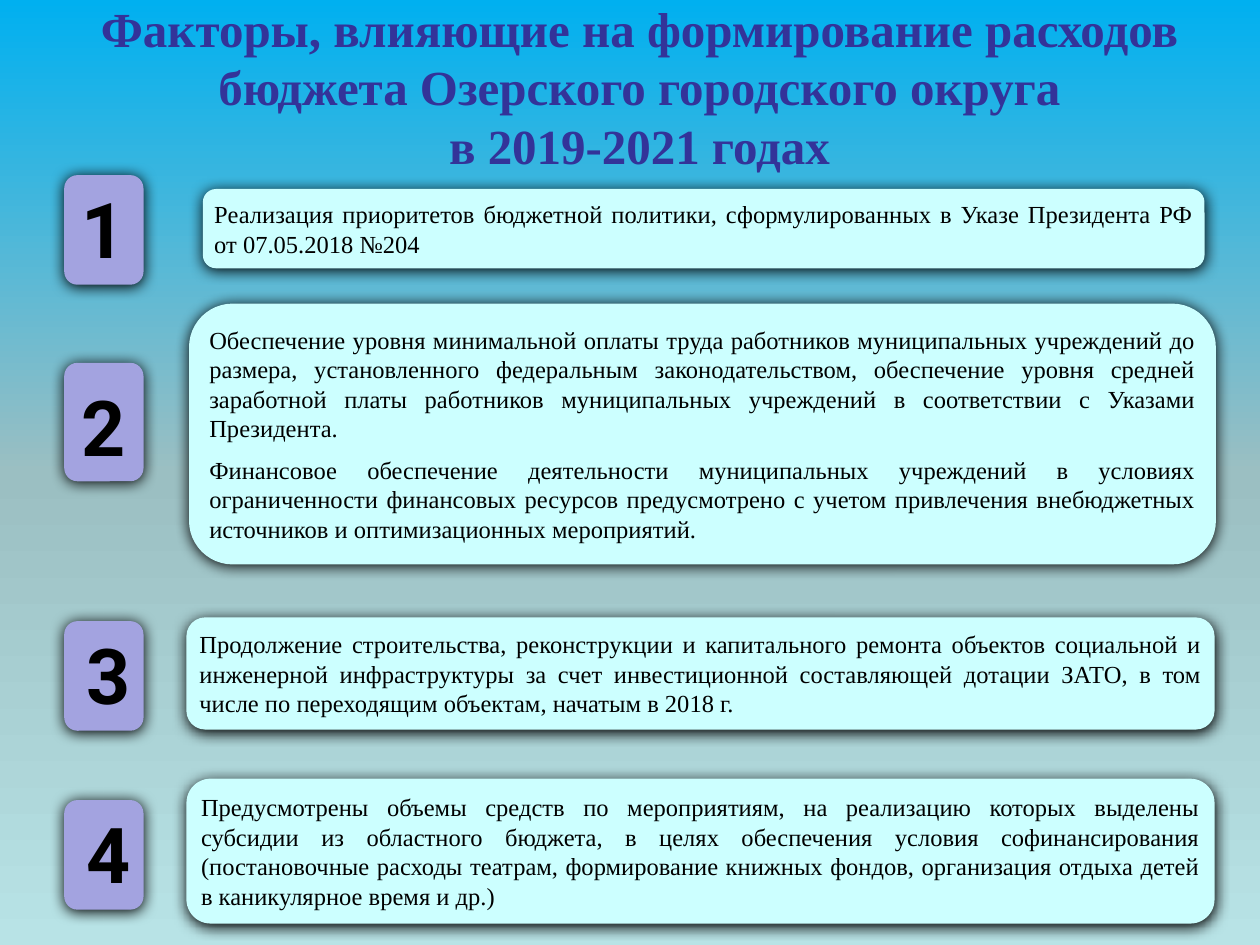
from copy import deepcopy

from lxml import etree
from pptx import Presentation
from pptx.dml.color import RGBColor
from pptx.enum.shapes import MSO_SHAPE
from pptx.enum.text import MSO_ANCHOR, MSO_AUTO_SIZE, PP_ALIGN
from pptx.oxml.ns import qn
from pptx.util import Inches, Pt

ROUNDED = MSO_SHAPE.ROUNDED_RECTANGLE
MIDDLE, TOP = MSO_ANCHOR.MIDDLE, MSO_ANCHOR.TOP
CENTER, JUSTIFY = PP_ALIGN.CENTER, PP_ALIGN.JUSTIFY
NO_AUTOFIT = MSO_AUTO_SIZE.NONE
TITLE_ONLY = 5
COLUMNS, ROWS = 100, 75


def color(hex_value):
    return RGBColor.from_string(hex_value)


class FactorSlide:
    SERIF, DIGITS = "Times New Roman", "Roboto"
    TITLE, INK, BADGE, PANEL = "333399", "000000", "A3A3E0", "CCFFFF"

    def __init__(self, deck):
        self.column = deck.slide_width / COLUMNS
        self.row = deck.slide_height / ROWS
        self.slide = deck.slides.add_slide(deck.slide_layouts[TITLE_ONLY])

    def place(self, left, top, width, height):
        return [round(share * unit) for share, unit in zip(
            (left, top, width, height), (self.column, self.row) * 2)]

    def set_text(self, frame, text, font, size, ink, align, anchor, inset, bold=False):
        frame.text = text
        frame.word_wrap = True
        frame.auto_size = NO_AUTOFIT
        frame.vertical_anchor = anchor
        frame.margin_left = frame.margin_right = Inches(inset)
        frame.margin_top = frame.margin_bottom = Inches(0.05)
        for number, paragraph in enumerate(frame.paragraphs):
            paragraph.alignment = align
            paragraph.space_before = Pt(size / 2 if number else 0)
            for run in paragraph.runs:
                run.font.name = font
                run.font.size = Pt(size)
                run.font.bold = bold
                run.font.color.rgb = color(ink)

    def background(self, stops):
        fill = self.slide.background.fill
        fill.gradient()
        fill.gradient_angle = 270
        stop_list = self.slide.element.find(".//" + qn("a:gsLst"))
        while len(stop_list) < len(stops):
            stop_list.append(deepcopy(stop_list[0]))
        for stop, (position, hex_value) in zip(fill.gradient_stops, stops):
            stop.position = position
            stop.color.rgb = color(hex_value)

    def title(self, text, *box):
        heading = self.slide.shapes.title
        heading.left, heading.top, heading.width, heading.height = self.place(*box)
        self.set_text(heading.text_frame, text, self.SERIF, 28, self.TITLE,
                      CENTER, MIDDLE, 0.1, bold=True)

    def card(self, fill, *box):
        card = self.slide.shapes.add_shape(ROUNDED, *self.place(*box))
        card.adjustments[0] = 0.167
        card.fill.solid()
        card.fill.fore_color.rgb = color(fill)
        card.line.fill.background()
        # Soft shadow just below the card
        card.shadow.inherit = False
        effects = card.element.spPr.find(qn("a:effectLst"))
        shadow = etree.SubElement(effects, qn("a:outerShdw"), blurRad=str(Pt(8.5)),
                                  dist=str(Pt(1)), dir="5400000", rotWithShape="0")
        etree.SubElement(shadow, qn("a:srgbClr"), val=self.INK)
        return card

    def badge(self, digit, top, height, digit_top, digit_width, inset):
        self.card(self.BADGE, 5.1, top, 6.3, height)
        label = self.slide.shapes.add_textbox(
            *self.place(5.9, digit_top, digit_width, 8.4))
        self.set_text(label.text_frame, digit, self.DIGITS, 44, self.INK,
                      CENTER, TOP, inset, bold=True)

    def panel(self, text, *box):
        panel = self.card(self.PANEL, *box)
        self.set_text(panel.text_frame, text, self.SERIF, 14, self.INK,
                      JUSTIFY, MIDDLE, 0.06)


# Badge: top, height, digit top, digit width, inset; panel: left, top, width, height
FACTORS = [
    ((13.9, 8.7, 13.9, 3.9, 0.06), (16.1, 15, 79.5, 6.3),
     "Реализация приоритетов бюджетной политики, сформулированных в Указе "
     "Президента РФ от 07.05.2018 №204"),
    ((28.8, 9.4, 29.6, 3.9, 0.06), (15, 24.1, 81.5, 20.7),
     "Обеспечение уровня минимальной оплаты труда работников муниципальных "
     "учреждений до размера, установленного федеральным законодательством, "
     "обеспечение уровня средней заработной платы работников муниципальных "
     "учреждений в соответствии с Указами Президента.\n"
     "Финансовое обеспечение деятельности муниципальных учреждений в условиях "
     "ограниченности финансовых ресурсов предусмотрено с учетом привлечения "
     "внебюджетных источников и оптимизационных мероприятий."),
    ((49.3, 8.7, 49.3, 4.7, 0.1), (14.8, 49, 81.6, 8.9),
     "Продолжение строительства, реконструкции и капитального ремонта объектов "
     "социальной и инженерной инфраструктуры за счет инвестиционной составляющей "
     "дотации ЗАТО, в том числе по переходящим объектам, начатым в 2018 г."),
    ((63.5, 8.7, 63.5, 4.7, 0.1), (14.8, 61.8, 81.6, 11.5),
     "Предусмотрены объемы средств по мероприятиям, на реализацию которых выделены "
     "субсидии из областного бюджета, в целях обеспечения условия софинансирования "
     "(постановочные расходы театрам, формирование книжных фондов, организация "
     "отдыха детей в каникулярное время и др.)"),
]


def main():
    deck = Presentation()
    deck.slide_width, deck.slide_height = Inches(10), Inches(7.5)
    page = FactorSlide(deck)

    # Background and heading
    page.background([(0, "00B0F0"), (0.5, "9BBFC2"), (1, "B8E3E6")])
    page.title("Факторы, влияющие на формирование расходов бюджета Озерского "
               "городского округа\vв 2019-2021 годах", 5.1, 0.6, 91.3, 12.5)

    # Numbered factors
    for number, (badge, panel, text) in enumerate(FACTORS, start=1):
        page.badge(str(number), *badge)
        page.panel(text, *panel)

    deck.save("out.pptx")


if __name__ == "__main__":
    main()
